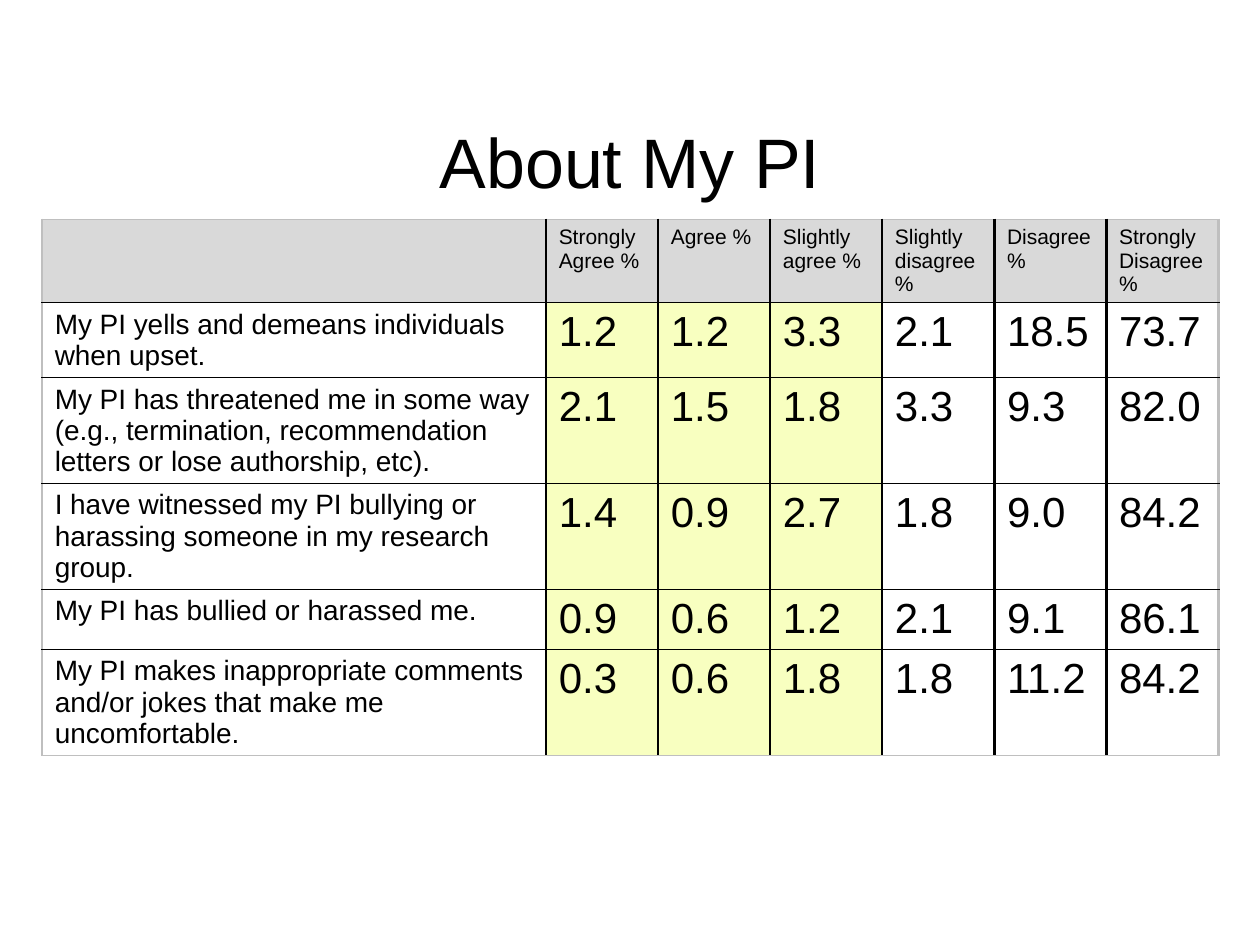
"""Build the "About My PI" survey slide."""
from dataclasses import dataclass

from lxml import etree
from pptx import Presentation
from pptx import util as u
from pptx.dml.color import RGBColor
from pptx.enum import text
from pptx.oxml import ns

TITLE = "About My PI"
HEADERS = ["", "Strongly Agree %", "Agree %", "Slightly agree %",
           "Slightly disagree %", "Disagree %", "Strongly Disagree %"]
ANSWERS = [
    ("My PI yells and demeans individuals when upset.",
     "1.2", "1.2", "3.3", "2.1", "18.5", "73.7"),
    ("My PI has threatened me in some way (e.g., termination, "
     "recommendation letters or lose authorship, etc).",
     "2.1", "1.5", "1.8", "3.3", "9.3", "82.0"),
    ("I have witnessed my PI bullying or\vharassing someone in my research group.",
     "1.4", "0.9", "2.7", "1.8", "9.0", "84.2"),
    ("My PI has bullied or harassed me.",
     "0.9", "0.6", "1.2", "2.1", "9.1", "86.1"),
    ("My PI makes inappropriate comments and/or jokes that make me uncomfortable.",
     "0.3", "0.6", "1.8", "1.8", "11.2", "84.2"),
]
COLUMN_WIDTHS = [10.16] + [2.26] * 6
ROW_HEIGHTS = [1.68, 1.51, 2.13, 2.13, 1.21, 2.13]
AGREE_COLUMNS = range(1, 4)


@dataclass(frozen=True)
class Theme:
    font: str = "Arial"
    ink: str = "000000"
    header_fill: str = "D9D9D9"
    agree_fill: str = "F8FFC0"
    frame: str = "BFBFBF"
    title_size: int = 40
    header_size: int = 12
    question_size: int = 16
    value_size: int = 24
    column_line: float = 1.5
    row_line: float = 1


THEME = Theme()


def format_text(text_frame, size):
    for paragraph in text_frame.paragraphs:
        for run in paragraph.runs:
            run.font.name = THEME.font
            run.font.size = u.Pt(size)
            run.font.color.rgb = RGBColor.from_string(THEME.ink)


def add_borders(cell, row, column):
    last_row, last_column = len(ROW_HEIGHTS) - 1, len(COLUMN_WIDTHS) - 1
    edges = {
        "a:lnL": (column == 0, THEME.column_line),
        "a:lnR": (column == last_column, THEME.column_line),
        "a:lnT": (row == 0, THEME.row_line),
        "a:lnB": (row == last_row, THEME.row_line),
    }
    properties = cell._tc.get_or_add_tcPr()
    for tag, (outer, width) in edges.items():
        line = etree.SubElement(properties, ns.qn(tag), w=str(u.Pt(width)))
        fill = etree.SubElement(line, ns.qn("a:solidFill"))
        etree.SubElement(fill, ns.qn("a:srgbClr"),
                         val=THEME.frame if outer else THEME.ink)


def fill_cell(cell, row, column):
    if row and column not in AGREE_COLUMNS:
        cell.fill.background()
        return
    cell.fill.solid()
    color = THEME.agree_fill if row else THEME.header_fill
    cell.fill.fore_color.rgb = RGBColor.from_string(color)


def text_size(row, column):
    if row == 0:
        return THEME.header_size
    return THEME.value_size if column else THEME.question_size


def add_title(slide):
    title = slide.shapes.title
    title.left, title.top = u.Cm(1.27), u.Cm(2.11)
    title.width, title.height = u.Cm(22.86), u.Cm(2.74)
    frame = title.text_frame
    frame.text = TITLE
    frame.auto_size = text.MSO_AUTO_SIZE.NONE
    frame.vertical_anchor = text.MSO_ANCHOR.TOP
    frame.margin_top = u.Cm(0.28)
    frame.paragraphs[0].alignment = text.PP_ALIGN.CENTER
    format_text(frame, THEME.title_size)


def add_answers(slide):
    rows = [HEADERS, *ANSWERS]
    table = slide.shapes.add_table(
        len(rows), len(HEADERS), u.Cm(0.85), u.Cm(4.42),
        u.Cm(sum(COLUMN_WIDTHS)), u.Cm(sum(ROW_HEIGHTS))).table
    table.first_row = table.horz_banding = False
    for column, width in zip(table.columns, COLUMN_WIDTHS):
        column.width = u.Cm(width)
    for row, height in zip(table.rows, ROW_HEIGHTS):
        row.height = u.Cm(height)
    for row, entries in enumerate(rows):
        for column, entry in enumerate(entries):
            cell = table.cell(row, column)
            add_borders(cell, row, column)
            fill_cell(cell, row, column)
            cell.text_frame.text = entry
            format_text(cell.text_frame, text_size(row, column))


def main():
    presentation = Presentation()
    presentation.slide_width, presentation.slide_height = u.Cm(25.4), u.Cm(19.05)
    slide = presentation.slides.add_slide(presentation.slide_layouts[5])
    add_title(slide)
    add_answers(slide)
    presentation.save("out.pptx")


if __name__ == "__main__":
    main()
